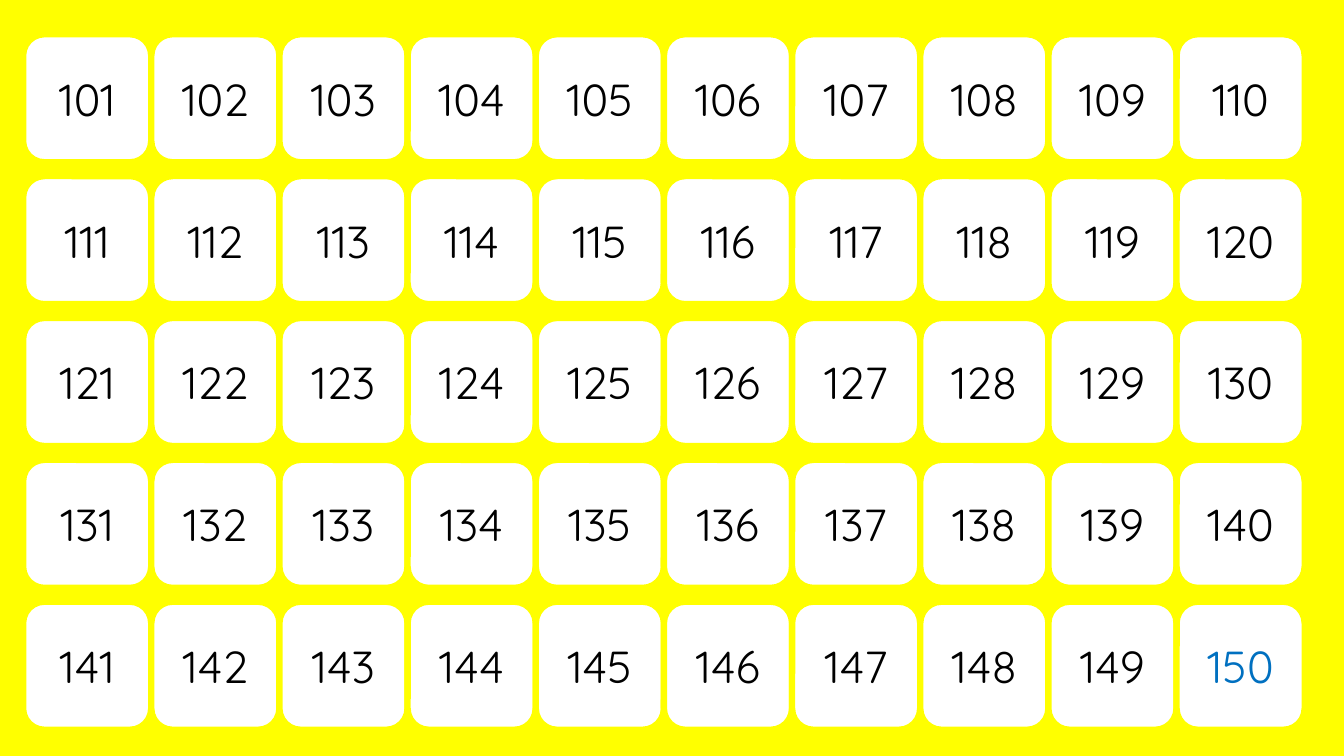
from pptx import Presentation
from pptx.dml.color import RGBColor
from pptx.enum.shapes import MSO_SHAPE
from pptx.enum.text import MSO_ANCHOR, PP_ALIGN
from pptx.util import Inches, Pt


def paint(color_format, hex_color):
    color_format.rgb = RGBColor.from_string(hex_color)


COLUMNS, ROWS = 10, 5
FIRST_NUMBER, LAST_NUMBER = 101, 150
LEFT, TOP = 0.23, 0.34
TILE_SIZE = 1.27
COLUMN_PITCH = (11.67 - LEFT) / (COLUMNS - 1)
ROW_PITCH = (5.97 - TOP) / (ROWS - 1)
YELLOW, WHITE, BLACK, BLUE = "FFFF00", "FFFFFF", "000000", "0070C0"

presentation = Presentation()
presentation.slide_width = Inches(13.33)
presentation.slide_height = Inches(7.5)
slide = presentation.slides.add_slide(presentation.slide_layouts[6])
background = slide.background.fill
background.solid()
paint(background.fore_color, YELLOW)

for number in range(FIRST_NUMBER, LAST_NUMBER + 1):
    row, column = divmod(number - FIRST_NUMBER, COLUMNS)
    tile = slide.shapes.add_shape(
        MSO_SHAPE.ROUNDED_RECTANGLE,
        Inches(LEFT + column * COLUMN_PITCH),
        Inches(TOP + row * ROW_PITCH),
        Inches(TILE_SIZE),
        Inches(TILE_SIZE),
    )
    tile.shadow.inherit = False
    tile.fill.solid()
    paint(tile.fill.fore_color, WHITE)
    paint(tile.line.color, YELLOW)
    tile.line.width = Pt(4.5)

    text_frame = tile.text_frame
    text_frame.text = str(number)
    text_frame.vertical_anchor = MSO_ANCHOR.MIDDLE
    paragraph = text_frame.paragraphs[0]
    paragraph.alignment = PP_ALIGN.CENTER
    font = paragraph.runs[0].font
    font.name = "Quicksand"
    font.size = Pt(32)
    paint(font.color, BLUE if number == LAST_NUMBER else BLACK)

presentation.save("out.pptx")
